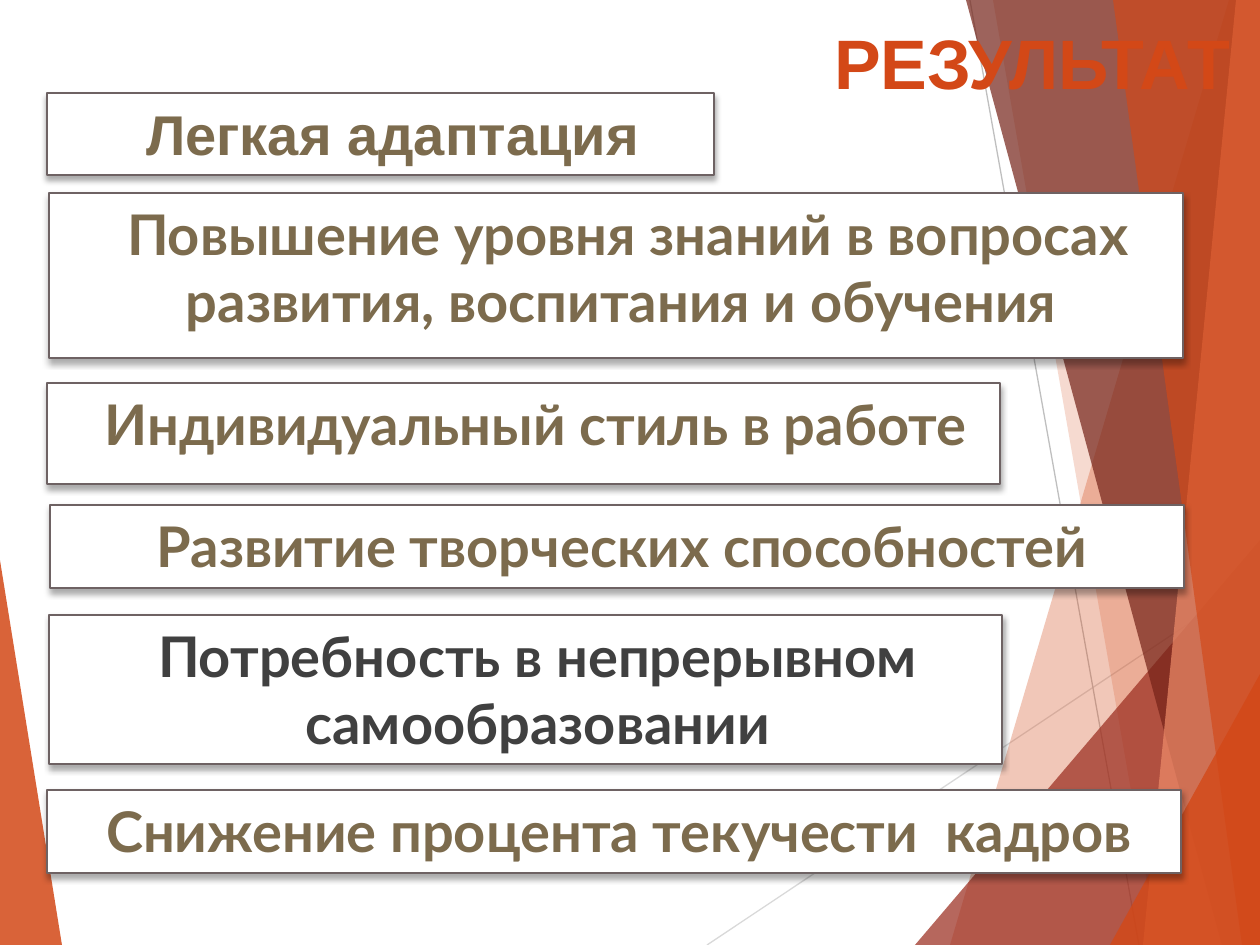
from lxml import etree
from pptx import Presentation
from pptx.dml.color import RGBColor
from pptx.enum.shapes import MSO_CONNECTOR, MSO_SHAPE
from pptx.enum.text import MSO_ANCHOR, PP_ALIGN
from pptx.oxml.ns import qn
from pptx.util import Pt

PX = 914400 / 126  # EMU in one px
WIDTH, HEIGHT = 1260, 945
STRAIGHT = MSO_CONNECTOR.STRAIGHT
RECTANGLE = MSO_SHAPE.RECTANGLE
TOP = MSO_ANCHOR.TOP
CENTER = PP_ALIGN.CENTER

ORANGE, BROWN, CHARCOAL = "D34817", "7C6B4D", "404040"

# Backdrop facets: fill, opacity in percent, corners
FACETS = [
    (ORANGE, 85, [(0, 560), (62, 945), (0, 945)]),
    (ORANGE, 30, [(1229, 0), (950, 945), (1260, 945), (1260, 0)]),
    (ORANGE, 20, [(993, 0), (1158, 945), (1260, 945), (1260, 0)]),
    ("9B2D1F", 72, [(915, 945), (1260, 540), (1260, 945)]),
    ("742217", 70, [(966, 0), (1222, 945), (1260, 945), (1260, 0)]),
    ("EF8C6A", 70, [(1236, 0), (1143, 945), (1260, 945), (1260, 0)]),
    (ORANGE, 65, [(1113, 0), (1242, 945), (1260, 945), (1260, 0)]),
    (ORANGE, 80, [(1110, 945), (1260, 674), (1260, 945)]),
]
RAYS = [("D9D9D9", (707, 945, 1260, 576)), ("BFBFBF", (970, 0, 1139, 945))]

# Result statements: box, wording, font, colour
STATEMENTS = [
    ((47, 93, 667, 82), "Легкая адаптация", "Arial", BROWN),
    ((49, 193, 1134, 165),
     "Повышение уровня знаний в вопросах развития, воспитания и обучения ", "Lato", BROWN),
    ((47, 383, 953, 101), "Индивидуальный стиль в работе", "Lato", BROWN),
    ((50, 505, 1134, 83), "Развитие творческих способностей ", "Lato", BROWN),
    ((49, 615, 953, 149), "Потребность в непрерывном самообразовании", "Lato", CHARCOAL),
    ((47, 790, 1134, 83), "Снижение процента текучести  кадров ", "Lato", BROWN),
]


def px(*lengths):
    return [round(length * PX) for length in lengths]


def paint(color_format, color):
    color_format.rgb = RGBColor.from_string(color)


def fill_solid(shape, color, opacity=100):
    shape.fill.solid()
    paint(shape.fill.fore_color, color)
    if opacity < 100:
        tint = shape.fill._xPr.find(qn("a:solidFill"))[0]
        etree.SubElement(tint, qn("a:alpha"), val=str(opacity * 1000))


def drop_shadow(shape):
    shape.shadow.inherit = False
    effects = shape._element.spPr.find(qn("a:effectLst"))
    shadow = etree.SubElement(effects, qn("a:outerShdw"), blurRad=str(Pt(3.5)),
                              dist=str(Pt(2.2)), dir="5400000", rotWithShape="0")
    tint = etree.SubElement(shadow, qn("a:srgbClr"), val="000000")
    etree.SubElement(tint, qn("a:alpha"), val="32000")


def write(shape, wording, font, size, color):
    frame = shape.text_frame
    frame.word_wrap = True
    frame.vertical_anchor = TOP
    frame.text = wording
    para = frame.paragraphs[0]
    para.alignment = CENTER
    properties = para._p.get_or_add_pPr()
    properties.set("marL", str(px(25)[0]))
    properties.set("indent", "0")
    span = para.runs[0]
    span.font.name, span.font.size, span.font.bold = font, Pt(size), True
    paint(span.font.color, color)


def add_facet(page, origin, color, opacity, corners):
    left, top = origin
    points = [(left + x, top + y) for x, y in corners]
    builder = page.shapes.build_freeform(*points[0], scale=PX)
    builder.add_line_segments(points[1:], close=True)
    facet = builder.convert_to_shape()
    facet.shadow.inherit = False
    facet.line.fill.background()
    fill_solid(facet, color, opacity)


def add_ray(page, origin, color, ends):
    left, top = origin
    x1, y1, x2, y2 = ends
    ray = page.shapes.add_connector(STRAIGHT, *px(left + x1, top + y1, left + x2, top + y2))
    ray.line.width = Pt(0.75)
    paint(ray.line.color, color)
    etree.SubElement(ray._element.spPr, qn("a:effectLst"))


def add_backdrop(page, box):
    origin = box[:2]
    add_facet(page, origin, *FACETS[0])
    for ray in RAYS:
        add_ray(page, origin, *ray)
    for facet in FACETS[1:]:
        add_facet(page, origin, *facet)


def add_title(page, box):
    title = page.shapes.add_textbox(*px(*box))
    write(title, "РЕЗУЛЬТАТ", "Arial", 40, ORANGE)


def add_statement(page, box, wording, font, color):
    panel = page.shapes.add_shape(RECTANGLE, *px(*box))
    fill_solid(panel, "FFFFFF")
    panel.line.width = Pt(1.5)
    paint(panel.line.color, "6E6263")
    drop_shadow(panel)
    write(panel, wording, font, 32, color)


def main():
    deck = Presentation()
    deck.slide_width, deck.slide_height = px(WIDTH, HEIGHT)
    page = deck.slides.add_slide(deck.slide_layouts[6])
    add_backdrop(page, (0, 0, WIDTH, HEIGHT))
    add_title(page, (789, 13, 461, 91))
    for statement in STATEMENTS:
        add_statement(page, *statement)
    deck.save("out.pptx")


if __name__ == "__main__":
    main()
